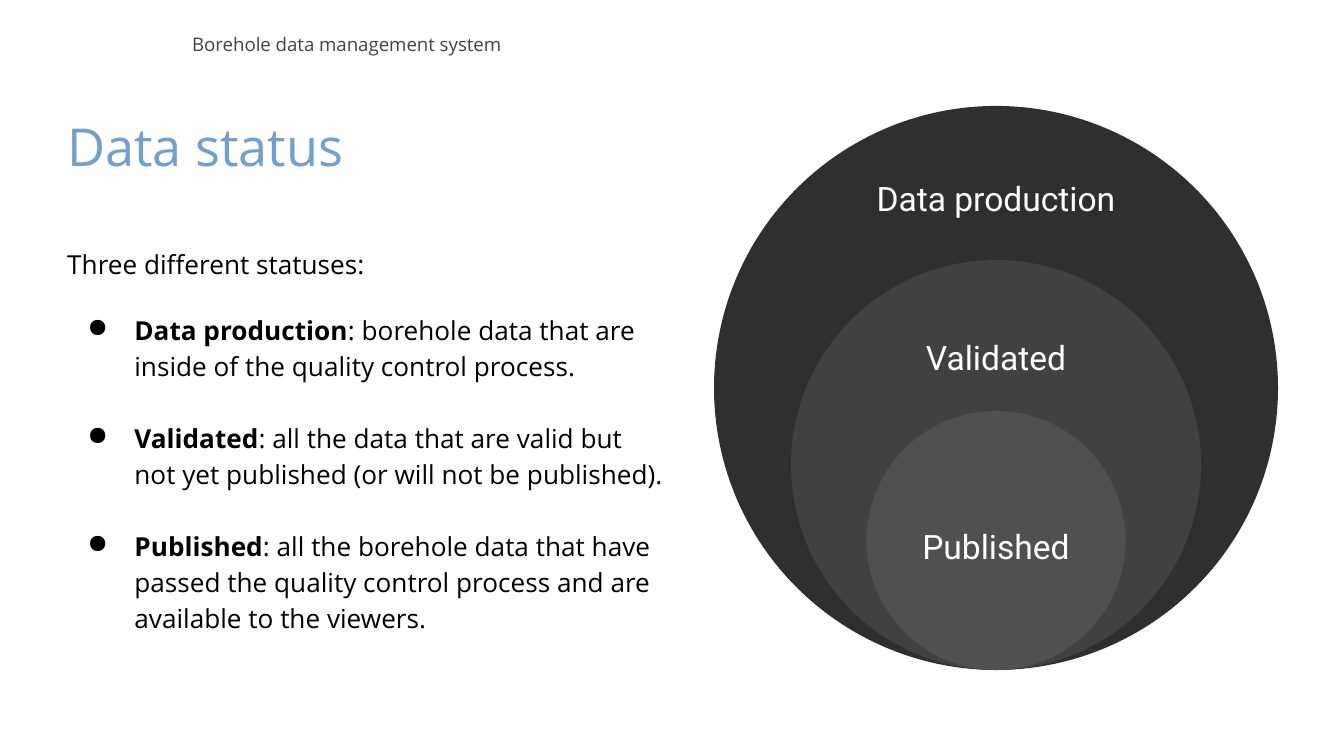
from lxml import etree
from pptx import Presentation
from pptx import util as u
from pptx.dml.color import RGBColor
from pptx.enum import shapes, text
from pptx.oxml.ns import qn

COLORS = {"header": "434343", "title": "729FCF", "body": "000000", "label": "FFFFFF",
          "outer": "2F2F2F", "middle": "414141", "inner": "505050"}

HEADER = "Borehole data management system"
TITLE = "Data status"
INTRO = "Three different statuses:"
STATUSES = [
    ("Data production", ": borehole data that are inside of the quality control process."),
    ("Validated", ": all the data that are valid but not yet published (or will not be published)."),
    ("Published", ": all the borehole data that have passed the quality control process "
                  "and are available to the viewers."),
]
CIRCLES = [("outer", 564, 198), ("middle", 410, 357), ("inner", 259, 546)]
CENTER_X, BOTTOM = 996, 670
LABEL_W, LABEL_H = 277, 98


def px(n):
    return u.Emu(round(n * 914400 / 134.4))


def text_box(x, y, w, h, anchor=text.MSO_ANCHOR.TOP):
    tf = s.shapes.add_textbox(px(x), px(y), px(w), px(h)).text_frame
    fmt = {"word_wrap": True, "vertical_anchor": anchor}
    for side in ("left", "right", "top", "bottom"):
        fmt["margin_" + side] = u.Inches(0.1)
    for name, value in fmt.items():
        setattr(tf, name, value)
    return tf


def add_run(p, content, size, color, font="Open Sans", bold=False):
    r = p.add_run()
    r.text = content
    for name, value in {"size": u.Pt(size), "name": font, "bold": bold}.items():
        setattr(r.font, name, value)
    r.font.color.rgb = RGBColor.from_string(COLORS[color])


def add_bullet(p):
    pPr = p._p.get_or_add_pPr()
    pPr.set("marL", str(u.Inches(0.5)))
    pPr.set("indent", str(-u.Inches(0.35)))
    clr = etree.SubElement(pPr, qn("a:buClr"))
    etree.SubElement(clr, qn("a:srgbClr"), val=COLORS["body"])
    etree.SubElement(pPr, qn("a:buChar"), char="●")


prs = Presentation()
prs.slide_width, prs.slide_height = px(1344), px(756)
s = prs.slides.add_slide(prs.slide_layouts[6])

tf = text_box(179, 24, 1106, 39, text.MSO_ANCHOR.MIDDLE)
add_run(tf.paragraphs[0], HEADER, 10, "header")
tf = text_box(54, 101, 1245, 105)
add_run(tf.paragraphs[0], TITLE, 28, "title")

tf = text_box(54, 230, 628, 474)
p = tf.paragraphs[0]
p.line_spacing = 1.15
add_run(p, INTRO, 14, "body")
for i, (status, meaning) in enumerate(STATUSES):
    p = tf.add_paragraph()
    add_bullet(p)
    p.line_spacing = 1.15
    p.space_before = u.Pt(19.3 if i else 16)
    add_run(p, status, 14, "body", bold=True)
    add_run(p, meaning, 14, "body")

for (color, size, label_y), (status, _) in zip(CIRCLES, STATUSES):
    sp = s.shapes.add_shape(shapes.MSO_SHAPE.OVAL, px(CENTER_X - size / 2), px(BOTTOM - size),
                            px(size), px(size))
    sp.shadow.inherit = False
    sp.fill.solid()
    sp.fill.fore_color.rgb = RGBColor.from_string(COLORS[color])
    sp.line.fill.background()
    tf = text_box(CENTER_X - LABEL_W / 2, label_y - LABEL_H / 2, LABEL_W, LABEL_H,
                  text.MSO_ANCHOR.MIDDLE)
    p = tf.paragraphs[0]
    p.alignment = text.PP_ALIGN.CENTER
    add_run(p, status, 18, "label", "Roboto")

prs.save("out.pptx")
